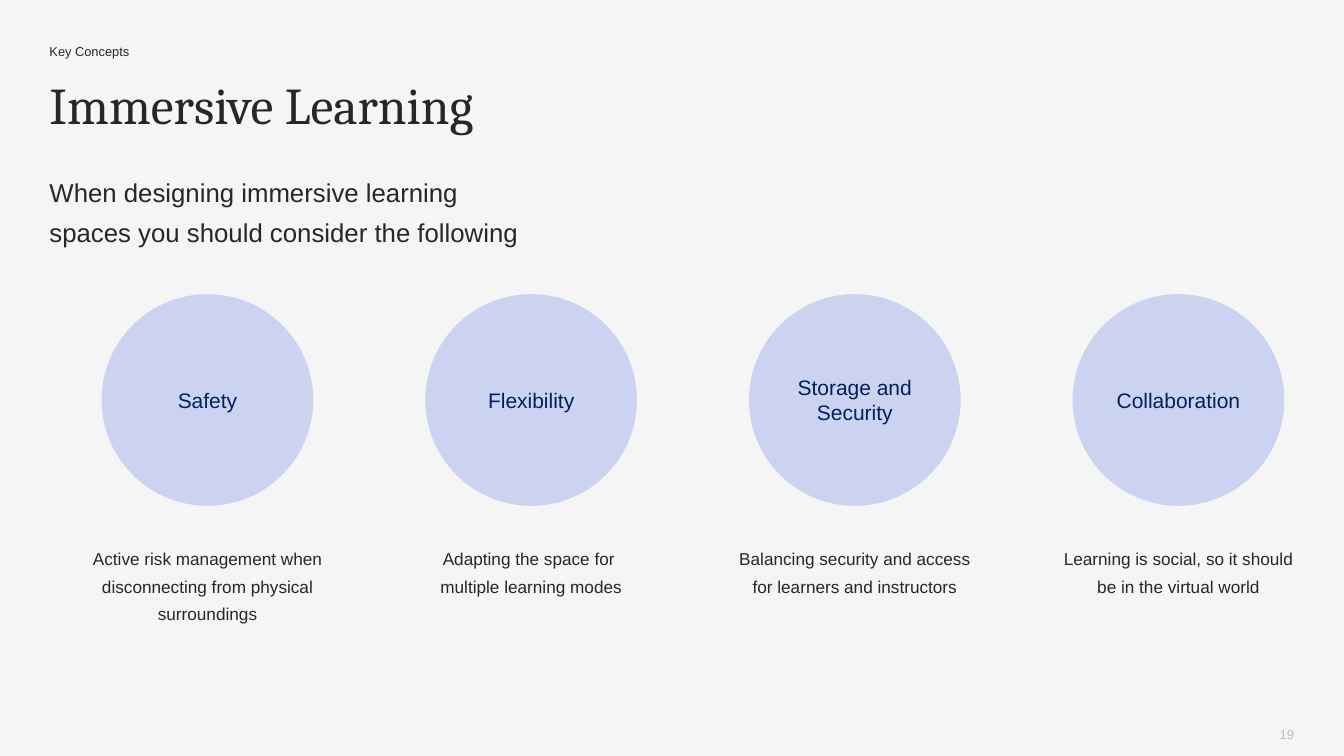
from pptx import Presentation
from pptx.dml.color import RGBColor
from pptx.enum.shapes import MSO_SHAPE as Shape
from pptx.enum.text import MSO_ANCHOR as Anchor, PP_ALIGN as Align
from pptx.util import Inches, Pt

KICKER = "Key Concepts"
TITLE = "Immersive Learning"
INTRO = "When designing immersive learning spaces you should consider the following"
PAGE_NUMBER = "19"
CONCEPTS = [
    ("Safety", "Active risk management when disconnecting from physical surroundings"),
    ("Flexibility", "Adapting the space for \vmultiple learning modes"),
    ("Storage and Security", "Balancing security and access for learners and instructors"),
    ("Collaboration", "Learning is social, so it should be in the virtual world"),
]

THEME = {
    "background": "F5F5F5", "ink": "272725", "muted": "BDBEBD",
    "circle": "CCD3F1", "label": "002060",
    "heading_font": "Cambria", "body_font": "Arial",
    "title": 54, "intro": 27, "label_size": 22, "caption": 18, "small": 13.5,
}

MARGIN = 0.72
FIRST_CENTER, PITCH = 3.02, 4.71
CIRCLE_TOP, DIAMETER = 4.28, 3.08
CAPTION_TOP, CAPTION_WIDTH, CAPTION_HEIGHT = 7.88, 3.66, 0.87
PARAGRAPH_GAP = 14.7


def write(shape, text, *, size, color="ink", font="body_font", align=Align.LEFT,
          anchor=Anchor.TOP, leading=None, before=0, inset=0):
    """Fill a shape with one formatted paragraph."""
    frame = shape.text_frame
    frame.word_wrap = True
    frame.vertical_anchor = anchor
    frame.margin_left = frame.margin_right = Inches(inset)
    frame.margin_top = frame.margin_bottom = Inches(inset / 2)
    para = frame.paragraphs[0]
    para.text = text
    para.alignment = align
    para.space_before = Pt(before)
    if leading:
        para.line_spacing = Pt(leading)
    for span in para.runs:
        span.font.name = THEME[font]
        span.font.size = Pt(THEME[size])
        span.font.color.rgb = RGBColor.from_string(THEME[color])


def add_text(page, bounds, text, **style):
    """Add a text box at the given bounds in inches."""
    box = page.shapes.add_textbox(*map(Inches, bounds))
    write(box, text, **style)


def add_concept(page, center, label, caption):
    """Add a labelled circle with its caption underneath."""
    bounds = (center - DIAMETER / 2, CIRCLE_TOP, DIAMETER, DIAMETER)
    circle = page.shapes.add_shape(Shape.OVAL, *map(Inches, bounds))
    circle.shadow.inherit = False
    circle.fill.solid()
    circle.fill.fore_color.rgb = RGBColor.from_string(THEME["circle"])
    circle.line.fill.background()
    write(circle, label, size="label_size", color="label", align=Align.CENTER,
          anchor=Anchor.MIDDLE, inset=0.1)
    add_text(page, (center - CAPTION_WIDTH / 2, CAPTION_TOP, CAPTION_WIDTH, CAPTION_HEIGHT),
             caption, size="caption", align=Align.CENTER, leading=28.8, before=PARAGRAPH_GAP)


def main():
    """Build and save the slide."""
    deck = Presentation()
    deck.slide_width, deck.slide_height = Inches(19.56), Inches(11)
    page = deck.slides.add_slide(deck.slide_layouts[6])
    page.background.fill.solid()
    page.background.fill.fore_color.rgb = RGBColor.from_string(THEME["background"])

    add_text(page, (MARGIN, 0.56, 7.34, 0.32), KICKER, size="small", leading=21.6)
    add_text(page, (MARGIN, 1.09, 11.95, 0.77), TITLE, size="title", font="heading_font",
             leading=62.6, before=PARAGRAPH_GAP)
    add_text(page, (MARGIN, 2.43, 7.1, 1.28), INTRO, size="intro", leading=42.1,
             before=PARAGRAPH_GAP)
    for index, (label, caption) in enumerate(CONCEPTS):
        add_concept(page, FIRST_CENTER + index * PITCH, label, caption)
    add_text(page, (17.64, 10.49, 1.19, 0.39), PAGE_NUMBER, size="small", color="muted",
             align=Align.RIGHT, anchor=Anchor.MIDDLE)
    deck.save("out.pptx")


if __name__ == "__main__":
    main()
